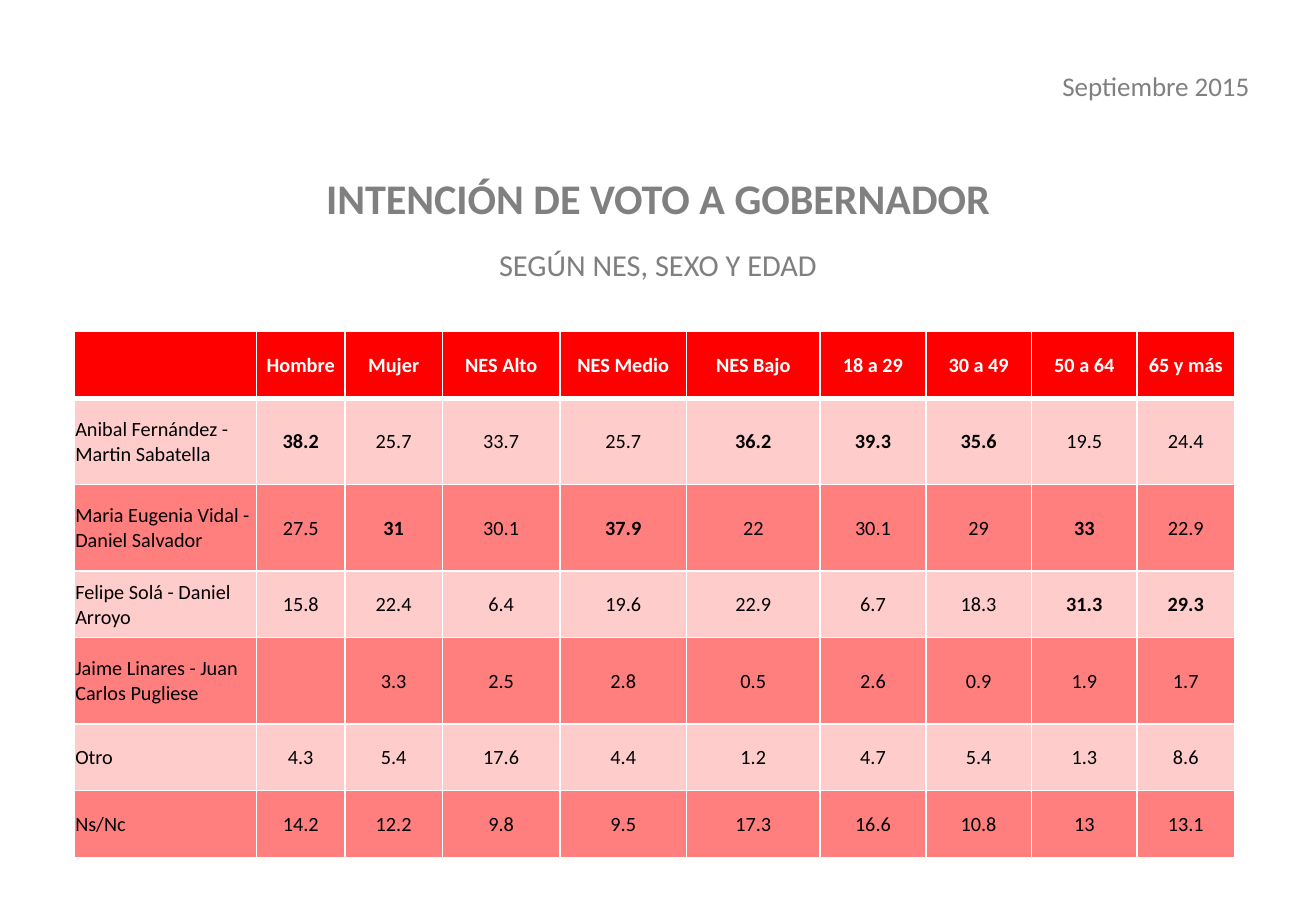
from lxml.etree import SubElement
from pptx import Presentation
from pptx.dml.color import RGBColor
from pptx.enum.text import MSO_ANCHOR, PP_ALIGN
from pptx.oxml.ns import qn
from pptx.util import Inches, Pt

FONT = "Calibri"
RED = RGBColor(0xFF, 0x00, 0x00)
WHITE = RGBColor(0xFF, 0xFF, 0xFF)
BLACK = RGBColor(0x00, 0x00, 0x00)
GRAY = RGBColor(0x80, 0x80, 0x80)
DARK_GRAY = RGBColor(0x7F, 0x7F, 0x7F)

COL_WIDTHS = [1.5, 0.73, 0.8, 0.97, 1.04, 1.1, 0.87, 0.87, 0.87, 0.8]
ROW_HEIGHTS = [0.55, 0.71, 0.71, 0.55, 0.71, 0.55, 0.55]
HEADERS = ["", "Hombre", "Mujer", "NES Alto", "NES Medio", "NES Bajo",
           "18 a 29", "30 a 49", "50 a 64", "65 y más"]
# Candidates, their shares by column, and the columns set in bold
RESULTS = [
    ("Anibal Fernández - Martin Sabatella",
     ["38.2", "25.7", "33.7", "25.7", "36.2", "39.3", "35.6", "19.5", "24.4"], {1, 5, 6, 7}),
    ("Maria Eugenia Vidal - Daniel Salvador",
     ["27.5", "31", "30.1", "37.9", "22", "30.1", "29", "33", "22.9"], {2, 4, 8}),
    ("Felipe Solá - Daniel Arroyo",
     ["15.8", "22.4", "6.4", "19.6", "22.9", "6.7", "18.3", "31.3", "29.3"], {8, 9}),
    ("Jaime Linares - Juan Carlos Pugliese",
     ["", "3.3", "2.5", "2.8", "0.5", "2.6", "0.9", "1.9", "1.7"], set()),
    ("Otro",
     ["4.3", "5.4", "17.6", "4.4", "1.2", "4.7", "5.4", "1.3", "8.6"], set()),
    ("Ns/Nc",
     ["14.2", "12.2", "9.8", "9.5", "17.3", "16.6", "10.8", "13", "13.1"], set()),
]


def add_run(p, text, size, color, bold=False):
    r = p.add_run()
    r.text = text
    r.font.name = FONT
    r.font.size = Pt(size)
    r.font.bold = bold
    r.font.color.rgb = color


def add_text_frame(slide, left, top, width, height):
    sp = slide.shapes.add_textbox(Inches(left), Inches(top), Inches(width), Inches(height))
    tf = sp.text_frame
    tf.word_wrap = True
    return tf


def set_border(cell, side, points):
    ln = SubElement(cell._tc.get_or_add_tcPr(), qn(f"a:ln{side}"), w=str(Pt(points)))
    fill = SubElement(ln, qn("a:solidFill"))
    SubElement(fill, qn("a:srgbClr"), val=str(WHITE))


def set_fill(cell, opacity):
    cell.fill.solid()
    cell.fill.fore_color.rgb = RED
    if opacity < 100:
        color = cell._tc.tcPr.find(qn("a:solidFill")).find(qn("a:srgbClr"))
        SubElement(color, qn("a:alpha"), val=str(opacity * 1000))


def format_cell(cell, row, col, text, bold):
    cell.vertical_anchor = MSO_ANCHOR.MIDDLE
    cell.margin_left = cell.margin_right = cell.margin_top = Inches(0.01)
    cell.margin_bottom = 0
    # White grid, with a thick rule under the header
    for side in "LRTB":
        thick = (row, side) in {(0, "B"), (1, "T")}
        set_border(cell, side, 3 if thick else 1)
    set_fill(cell, 100 if row == 0 else 20 if row % 2 else 50)
    if text:
        p = cell.text_frame.paragraphs[0]
        p.alignment = PP_ALIGN.CENTER if col else PP_ALIGN.LEFT
        add_run(p, text, 12, BLACK if row else WHITE, bold)


def add_results_table(slide):
    rows = [(HEADERS, set(range(len(HEADERS))))]
    rows += [([name] + shares, bold_cols) for name, shares, bold_cols in RESULTS]
    table = slide.shapes.add_table(
        len(rows), len(HEADERS), Inches(0.61), Inches(2.73),
        Inches(sum(COL_WIDTHS)), Inches(sum(ROW_HEIGHTS))).table
    table.horz_banding = False
    for column, width in zip(table.columns, COL_WIDTHS):
        column.width = Inches(width)
    for table_row, height in zip(table.rows, ROW_HEIGHTS):
        table_row.height = Inches(height)
    for row, (texts, bold_cols) in enumerate(rows):
        for col, text in enumerate(texts):
            format_cell(table.cell(row, col), row, col, text, col in bold_cols)


def add_title(slide):
    tf = add_text_frame(slide, 0, 1.47, 10.83, 1.64)
    tf.margin_top = Inches(0.03)
    p = tf.paragraphs[0]
    add_run(p, "INTENCIÓN DE VOTO A GOBERNADOR", 25, GRAY, True)
    p = tf.add_paragraph()
    p.space_before = Pt(18)
    add_run(p, "SEGÚN NES, SEXO Y EDAD", 18, DARK_GRAY)
    for p in tf.paragraphs:
        p.alignment = PP_ALIGN.CENTER
        p.line_spacing = 0.8


def add_date(slide):
    p = add_text_frame(slide, 8.57, 0.52, 1.81, 0.37).paragraphs[0]
    p.alignment = PP_ALIGN.RIGHT
    add_run(p, "Septiembre 2015", 16, GRAY)


def main():
    prs = Presentation()
    prs.slide_width = Inches(10.83)
    prs.slide_height = Inches(7.5)
    slide = prs.slides.add_slide(prs.slide_layouts[6])
    add_results_table(slide)
    add_title(slide)
    add_date(slide)
    prs.save("out.pptx")


if __name__ == "__main__":
    main()
